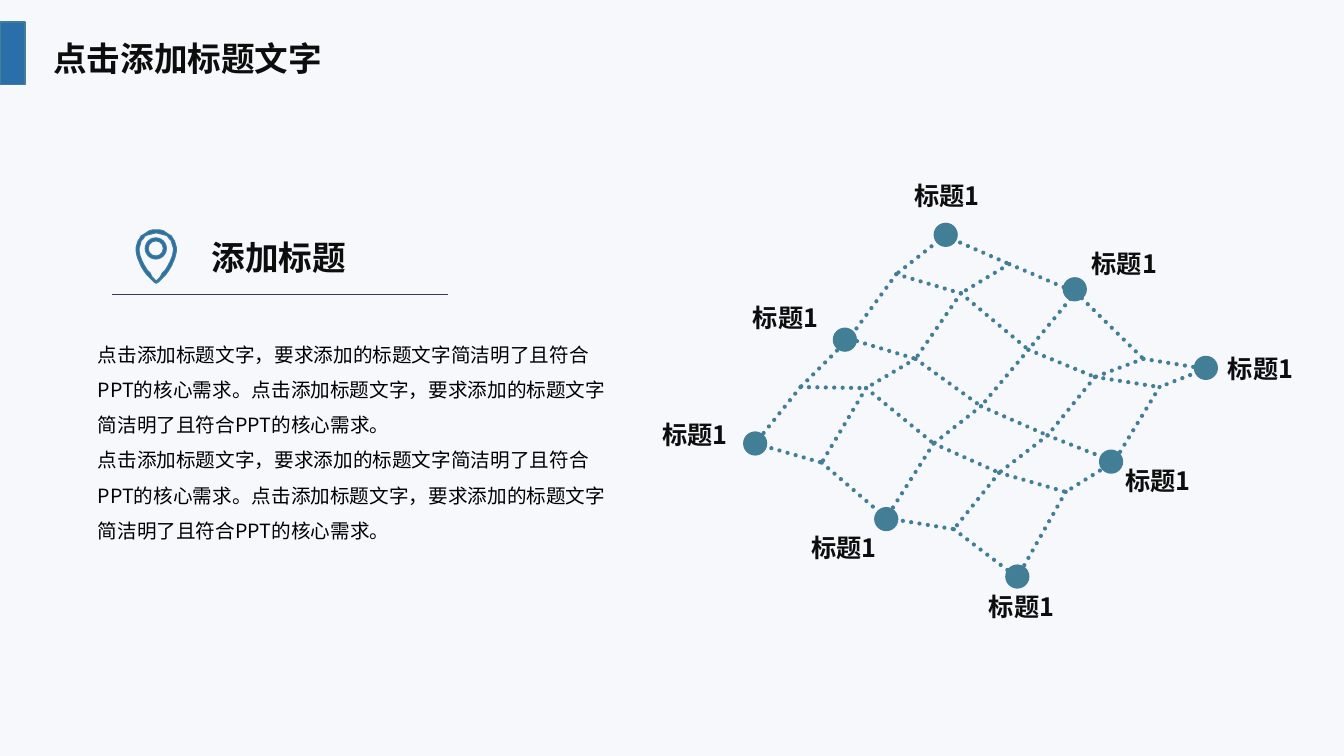
from dataclasses import dataclass
from itertools import pairwise

from lxml.etree import SubElement
from pptx import Presentation
from pptx.dml.color import RGBColor
from pptx.enum.dml import MSO_LINE
from pptx.enum.shapes import MSO_CONNECTOR, MSO_SHAPE as Preset
from pptx.oxml.ns import qn
from pptx.util import Emu, Pt

PX = 9144  # 100 px to the inch
FONT = "Noto Sans CJK SC"
COLORS = {
    "background": "F6F8FC",
    "heading": "0D0D0D",
    "body": "000000",
    "rule": "333F50",
    "mesh": "427E96",
    "accent": "2A6FAA",
}
Point = tuple[int, int]


@dataclass(frozen=True)
class Marker:
    center: Point
    label: Point


@dataclass(frozen=True)
class TextBlock:
    left: int
    top: int
    width: int
    height: int
    paragraphs: tuple[str, ...]
    size: int
    color: str = "heading"
    bold: bool = True
    line_spacing: float | None = None
    inset: Point = (10, 5)


# Rows run north-west to south-east, columns south-west to north-east
MESH: list[list[Point]] = [
    [(937, 234), (1001, 262), (1067, 290), (1134, 356), (1196, 366)],
    [(889, 272), (953, 291), (1020, 347), (1086, 374), (1150, 384)],
    [(842, 336), (908, 356), (973, 403), (1039, 432), (1105, 458)],
    [(794, 384), (859, 385), (926, 440), (991, 469), (1057, 488)],
    [(749, 440), (815, 459), (879, 514), (946, 525), (1009, 573)],
]
DOT_SIZE = 24
MARKERS = [
    Marker((879, 515), (795, 523)),
    Marker((1009, 572), (971, 582)),
    Marker((1102, 458), (1106, 457)),
    Marker((1196, 365), (1208, 346)),
    Marker((1066, 287), (1073, 241)),
    Marker((938, 233), (897, 174)),
    Marker((838, 337), (737, 295)),
    Marker((749, 440), (647, 411)),
]
# Right half of each pin outline: distance from the axis, then height
PIN_AXIS = 155
PIN_OUTLINES: list[list[Point]] = [
    [(0, 228), (3, 228), (7, 229), (10, 231), (13, 233), (15, 234), (16, 236),
     (18, 239), (19, 242), (20, 246), (20, 249), (19, 254), (18, 257), (15, 264),
     (12, 269), (9, 273), (6, 276), (2, 280), (0, 281)],
    [(0, 231), (4, 232), (8, 233), (11, 234), (13, 237), (15, 239), (16, 243),
     (17, 246), (17, 249), (16, 254), (14, 259), (12, 263), (9, 268), (6, 271),
     (4, 275), (1, 278), (0, 279)],
]
SENTENCE = "点击添加标题文字，要求添加的标题文字简洁明了且符合PPT的核心需求。"
TEXTS = [
    TextBlock(43, 33, 401, 50, ("点击添加标题文字",), 24),
    TextBlock(200, 230, 263, 50, ("添加标题",), 24),
    TextBlock(90, 324, 526, 215, (SENTENCE * 2,) * 2, 14, "body", False, 1.5, (7, 4)),
    *(TextBlock(*marker.label, 86, 40, ("标题1",), 18) for marker in MARKERS),
]


def px(length: int) -> Emu:
    return Emu(length * PX)


def rgb(name: str) -> RGBColor:
    return RGBColor.from_string(COLORS[name])


def paint(shape, fill: str, line_width: float = 0) -> None:
    shape.shadow.inherit = False
    shape.fill.solid()
    shape.fill.fore_color.rgb = rgb(fill)
    if line_width:
        shape.line.color.rgb = rgb("mesh")
        shape.line.width = Pt(line_width)
    else:
        shape.line.fill.background()


def add_preset(shapes, preset: Preset, left: int, top: int, width: int, height: int,
               fill: str, line_width: float = 0):
    shape = shapes.add_shape(preset, px(left), px(top), px(width), px(height))
    paint(shape, fill, line_width)
    return shape


def add_line(shapes, start: Point, end: Point, color: str, width: float,
             dotted: bool = False) -> None:
    line = shapes.add_connector(MSO_CONNECTOR.STRAIGHT, *map(px, start + end))
    line.line.color.rgb = rgb(color)
    line.line.width = Pt(width)
    properties = line._element.spPr
    if dotted:
        line.line.dash_style = MSO_LINE.ROUND_DOT
        properties.find(qn("a:ln")).set("cap", "rnd")
    SubElement(properties, qn("a:effectLst"))


def add_text(shapes, block: TextBlock) -> None:
    box = shapes.add_textbox(px(block.left), px(block.top), px(block.width), px(block.height))
    frame = box.text_frame
    frame.word_wrap = True
    frame.margin_left = frame.margin_right = px(block.inset[0])
    frame.margin_top = frame.margin_bottom = px(block.inset[1])
    for index, text in enumerate(block.paragraphs):
        paragraph = frame.add_paragraph() if index else frame.paragraphs[0]
        paragraph.line_spacing = block.line_spacing
        run = paragraph.add_run()
        run.text = text
        run.font.name = FONT
        run.font.size = Pt(block.size)
        run.font.bold = block.bold
        run.font.color.rgb = rgb(block.color)
        SubElement(run._r.get_or_add_rPr(), qn("a:ea")).set("typeface", FONT)


def add_pin(shapes) -> None:
    contours = [
        [(PIN_AXIS + dx, y) for dx, y in half]
        + [(PIN_AXIS - dx, y) for dx, y in reversed(half[1:-1])]
        for half in PIN_OUTLINES
    ]
    outer, inner = contours
    builder = shapes.build_freeform(*outer[0], scale=PX)
    builder.add_line_segments(outer[1:], close=True)
    builder.move_to(*inner[0])
    builder.add_line_segments(inner[1:], close=True)
    paint(builder.convert_to_shape(), "accent", 0.75)
    ring = add_preset(shapes, Preset.DONUT, 144, 236, 21, 21, "accent", 0.75)
    ring.adjustments[0] = 0.14


def main() -> None:
    deck = Presentation()
    deck.slide_width, deck.slide_height = px(1333), px(750)
    slide = deck.slides.add_slide(deck.slide_layouts[6])
    slide.background.fill.solid()
    slide.background.fill.fore_color.rgb = rgb("background")
    shapes = slide.shapes

    # Title bar, heading rule and pin
    add_preset(shapes, Preset.RECTANGLE, 0, 22, 25, 62, "accent", 1)
    add_line(shapes, (111, 292), (444, 292), "rule", 1)
    add_pin(shapes)

    # Dotted mesh with its markers
    for strand in [*MESH, *zip(*MESH)]:
        for start, end in pairwise(strand):
            add_line(shapes, start, end, "mesh", 3, dotted=True)
    for marker in MARKERS:
        x, y = marker.center
        add_preset(shapes, Preset.OVAL, x - DOT_SIZE // 2, y - DOT_SIZE // 2,
                   DOT_SIZE, DOT_SIZE, "mesh")

    # Title, heading, body and marker labels
    for block in TEXTS:
        add_text(shapes, block)

    deck.save("out.pptx")


if __name__ == "__main__":
    main()
